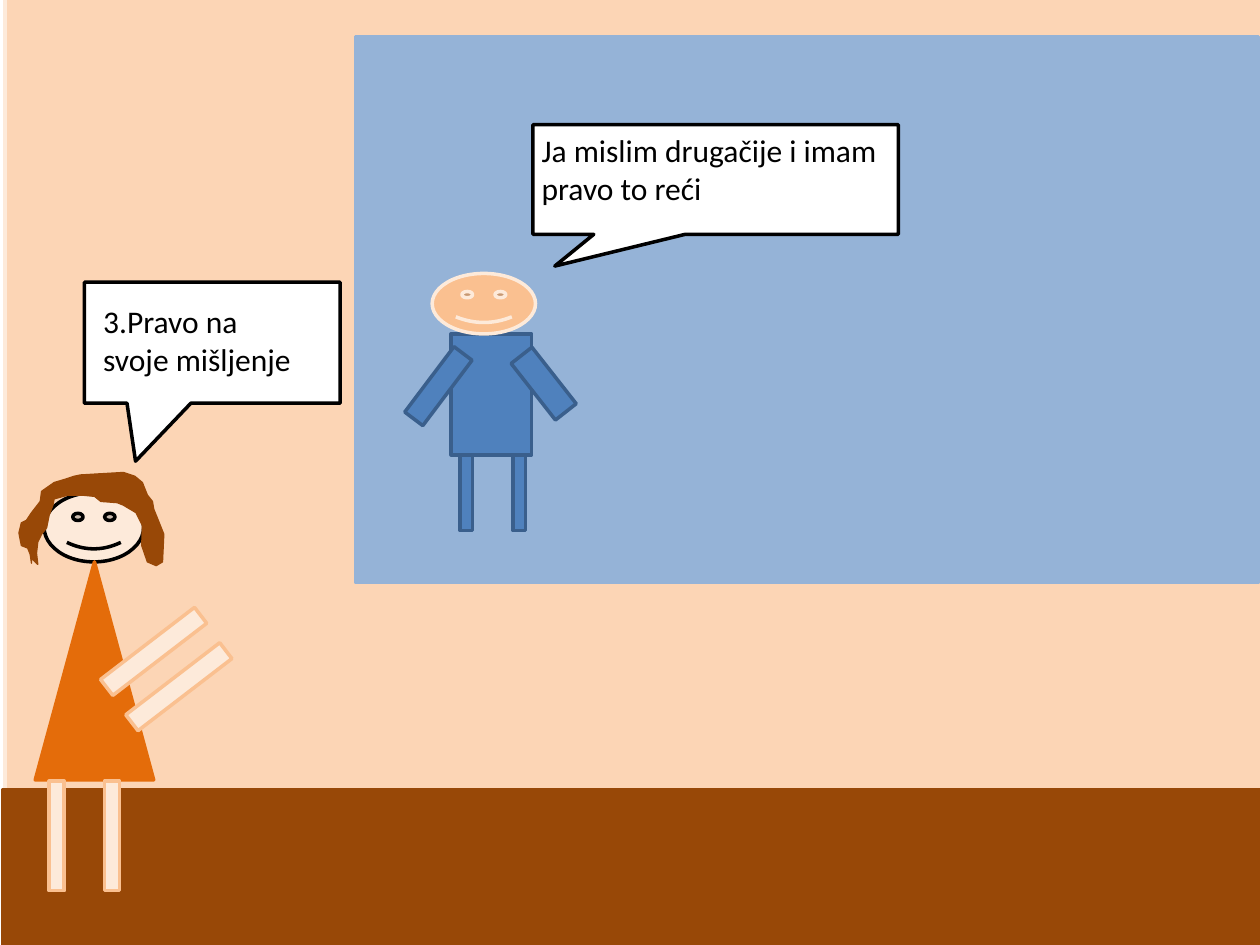
from dataclasses import dataclass

from pptx import Presentation
from pptx.dml.color import RGBColor
from pptx.enum.shapes import MSO_SHAPE
from pptx.enum.text import MSO_ANCHOR, PP_ALIGN
from pptx.util import Inches, Pt

SLIDE_W, SLIDE_H = 10, 7.5
BLACK, WHITE = "000000", "FFFFFF"
WALL, PALE_SKIN, SKIN = "FCD5B5", "FDEADA", "FAC090"
BROWN, BOARD, ORANGE = "984807", "95B3D7", "E46C0A"
SUIT, SUIT_EDGE = "4F81BD", "3A5F8C"

HAIR_POINTS = [
    (1.5, 7.3), (1.4, 6.4), (1.5, 5.5), (1.8, 4.9), (2.2, 4.4), (2.4, 3.4),
    (2.7, 2.6), (2.8, 2.1), (3.9, 1.8), (5, 1.8), (6, 1.9), (6.5, 2.3),
    (7.8, 2.4), (8.3, 2.6), (9.3, 3.2), (9.8, 4.2), (9.75, 5.8), (10.2, 7.1),
    (10.9, 7.4), (11.4, 7.1), (11.5, 4.9), (10.9, 3.4), (10.7, 2.9),
    (10.6, 2.3), (10.2, 1.8), (9.8, 0.8), (9.2, 0.3), (8.3, 0), (4.9, 0.2),
    (4.4, 0.3), (3.8, 0.5), (2.8, 0.8), (1.8, 1.5), (1.7, 2.3), (1, 3.2),
    (0.6, 3.8), (0.2, 4), (0, 4.8), (0.2, 5.8), (0.7, 6), (0.9, 6.5),
    (1, 7.2), (1, 6.8),
]


@dataclass
class Box:
    left: float
    top: float
    width: float
    height: float

    def cells(self, columns, rows, col, row, wide, high):
        """Part of this box, counted on a grid of columns by rows."""
        cell_w, cell_h = self.width / columns, self.height / rows
        return Box(self.left + col * cell_w, self.top + row * cell_h,
                   wide * cell_w, high * cell_h)

    def emu(self):
        return [Inches(v) for v in (self.left, self.top, self.width, self.height)]


def color(hex_code):
    return RGBColor.from_string(hex_code)


def paint(shape, fill, line, weight=2):
    shape.shadow.inherit = False
    shape.fill.solid()
    shape.fill.fore_color.rgb = color(fill)
    shape.line.color.rgb = color(line)
    shape.line.width = Pt(weight)


def add_part(slide, box, fill, line, kind=MSO_SHAPE.RECTANGLE, turn=0):
    part = slide.shapes.add_shape(kind, *box.emu())
    part.rotation = turn
    paint(part, fill, line)
    return part


def add_room(slide, room):
    """Wall, floor and board, on a grid of tenths of an inch."""
    for cells, fill, line in [
        ((0.4, -0.2, 100, 75), WALL, PALE_SKIN),
        ((0.2, 62.7, 100, 12.3), BROWN, BROWN),
        ((28.2, 2.9, 71.7, 43.3), BOARD, BOARD),
    ]:
        add_part(slide, room.cells(100, 75, *cells), fill, line)


def add_boy(slide, box):
    shirt = (3.8, 4.8, 6.4, 9.6)
    legs = [(col, 14.4, 1, 6) for col in (8.7, 4.5)]
    arms = [((1.9, 5.7, 1.8, 6.5), 37), ((10.1, 5.9, 2.1, 5.7), 321.9)]
    for cells, turn in [(shirt, 0), *((leg, 0) for leg in legs), *arms]:
        add_part(slide, box.cells(14, 20.4, *cells), SUIT, SUIT_EDGE, turn=turn)
    head = box.cells(14, 20.4, 2.3, 0, 8.2, 4.8)
    add_part(slide, head, SKIN, PALE_SKIN, MSO_SHAPE.SMILEY_FACE)


def add_girl(slide, box):
    def cells(*place):
        return box.cells(17.5, 33.2, *place)

    add_part(slide, cells(2, 1.6, 7.9, 5.5), PALE_SKIN, BLACK, MSO_SHAPE.SMILEY_FACE)
    add_part(slide, cells(1.3, 7.1, 9.4, 17.3), ORANGE, ORANGE,
             MSO_SHAPE.ISOSCELES_TRIANGLE)
    for col, row in [(6, 13.4), (8, 16.2)]:
        add_part(slide, cells(col, row, 9.4, 1.6), PALE_SKIN, SKIN, turn=322.5)
    for col in (2.4, 6.8):
        add_part(slide, cells(col, 24.5, 1.2, 8.7), PALE_SKIN, SKIN)
    add_hair(slide, cells)


def add_hair(slide, cells):
    spots = [cells(col, row, 0, 0) for col, row in HAIR_POINTS]
    start, *rest = [(Inches(s.left), Inches(s.top)) for s in spots]
    outline = slide.shapes.build_freeform(*start)
    outline.add_line_segments(rest, close=True)
    paint(outline.convert_to_shape(), BROWN, BROWN, 0.75)


def add_speech(slide, bubble_box, text_box, tail, words):
    bubble = add_part(slide, bubble_box, WHITE, BLACK,
                      MSO_SHAPE.RECTANGULAR_CALLOUT)
    bubble.adjustments[0], bubble.adjustments[1] = tail
    speech = slide.shapes.add_textbox(*text_box.emu()).text_frame
    speech.word_wrap = True
    speech.vertical_anchor = MSO_ANCHOR.TOP
    speech.text = words
    paragraph = speech.paragraphs[0]
    paragraph.alignment = PP_ALIGN.LEFT
    font = paragraph.runs[0].font
    font.name, font.size = "Calibri", Pt(18)
    font.color.rgb = color(BLACK)


def main():
    prs = Presentation()
    prs.slide_width, prs.slide_height = Inches(SLIDE_W), Inches(SLIDE_H)
    slide = prs.slides.add_slide(prs.slide_layouts[6])

    add_room(slide, Box(0, 0, SLIDE_W, SLIDE_H))
    add_boy(slide, Box(3.2, 2.17, 1.4, 2.04))
    add_speech(slide, Box(4.23, 0.99, 2.9, 0.87), Box(4.2, 0.99, 2.92, 0.71),
               (-0.44, 0.79), "Ja mislim drugačije i imam pravo to reći")
    add_girl(slide, Box(0.15, 3.75, 1.75, 3.32))
    add_speech(slide, Box(0.67, 2.24, 2.03, 0.96), Box(0.72, 2.35, 1.81, 0.71),
               (-0.3, 0.98), "3.Pravo na svoje mišljenje")

    prs.save("out.pptx")


if __name__ == "__main__":
    main()
